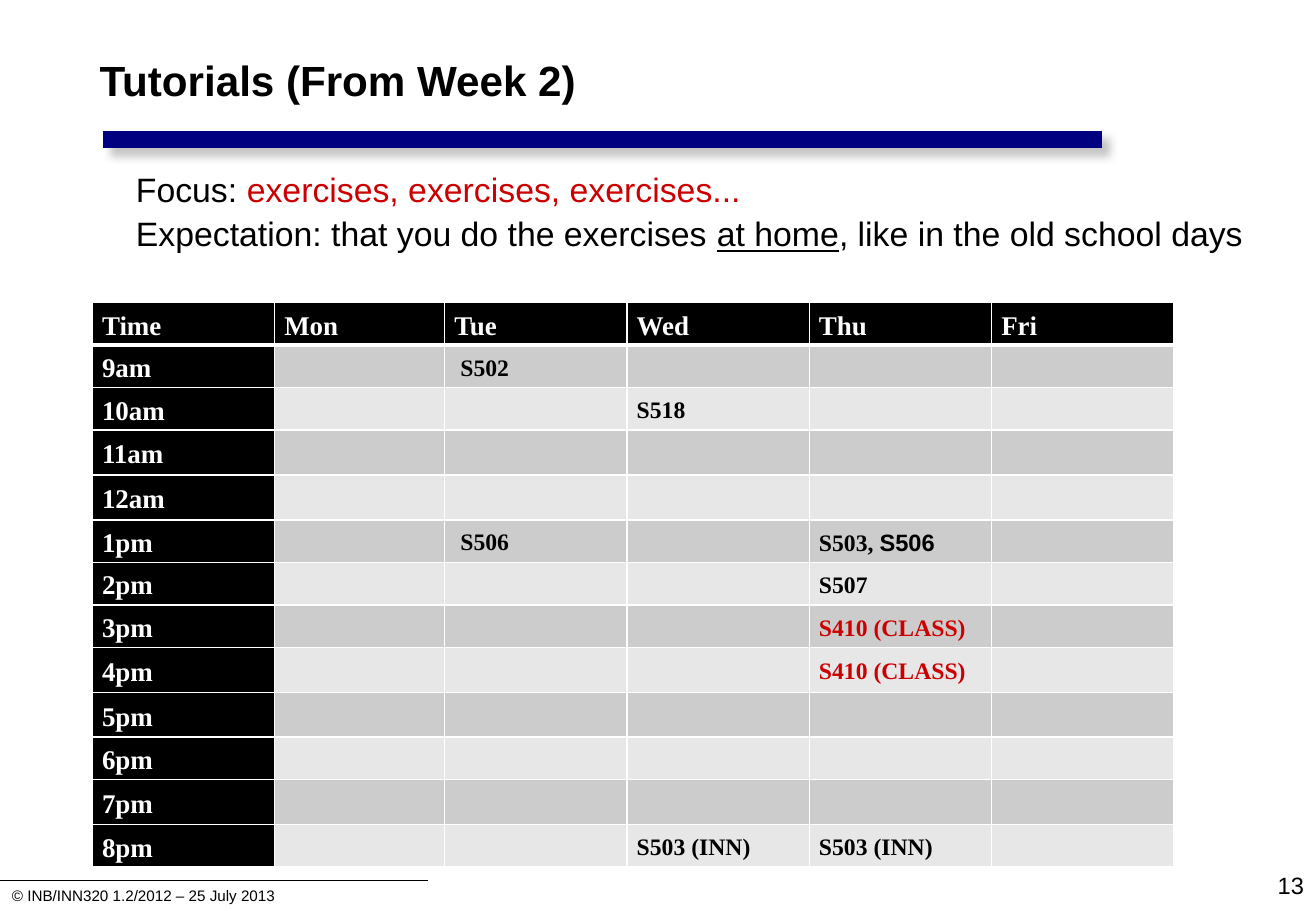
from lxml.etree import SubElement
from pptx import Presentation
from pptx.dml.color import RGBColor
from pptx.enum.shapes import MSO_CONNECTOR as Connector
from pptx.enum.text import MSO_ANCHOR as Anchor, PP_ALIGN as Align
from pptx.oxml import parse_xml
from pptx.oxml.ns import nsdecls, qn
from pptx.util import Inches, Pt

BLACK, WHITE, RED, NAVY = "000000", "FFFFFF", "CC0000", "000080"
BANDS = ["CCCCCC", "E7E7E7"]
SANS, SERIF = "Arial", "Times New Roman"

DAYS = ["Time", "Mon", "Tue", "Wed", "Thu", "Fri"]
HOURS = ["9am", "10am", "11am", "12am", "1pm", "2pm", "3pm", "4pm", "5pm",
         "6pm", "7pm", "8pm"]
TALL_HOURS = {"11am", "12am", "4pm", "5pm", "7pm"}
# (hour, day): runs of text, colour and font
BOOKINGS = {
    ("9am", "Tue"): [(" S502", BLACK, SERIF)],
    ("10am", "Wed"): [("S518", BLACK, SERIF)],
    ("1pm", "Tue"): [(" S506", BLACK, SERIF)],
    ("1pm", "Thu"): [("S503, ", BLACK, SERIF), ("S506", BLACK, SANS)],
    ("2pm", "Thu"): [("S507", BLACK, SERIF)],
    ("3pm", "Thu"): [("S410 (CLASS)", RED, SERIF)],
    ("4pm", "Thu"): [("S410 (CLASS)", RED, SERIF)],
    ("8pm", "Wed"): [("S503 (INN)", BLACK, SERIF)],
    ("8pm", "Thu"): [("S503 (INN)", BLACK, SERIF)],
}


def color(value):
    return RGBColor.from_string(value)


def add_run(paragraph, text, size, fill=BLACK, font=SANS, bold=False, underline=False):
    run = paragraph.add_run()
    run.text = text
    run.font.size = Pt(size)
    run.font.name = font
    run.font.bold = bold
    run.font.underline = underline
    run.font.color.rgb = color(fill)


def add_text_box(slide, left, top, width, height, wrap=False):
    shape = slide.shapes.add_textbox(
        Inches(left), Inches(top), Inches(width), Inches(height))
    shape.text_frame.word_wrap = wrap
    return shape.text_frame


def add_line(slide, left, top, width, fill, weight):
    line = slide.shapes.add_connector(
        Connector.STRAIGHT, Inches(left), Inches(top), Inches(left + width), Inches(top))
    line.line.color.rgb = color(fill)
    line.line.width = Pt(weight)
    return SubElement(line._element.spPr, qn("a:effectLst"))


def add_title(slide, left, top, width, height):
    title = slide.shapes.title
    title.left, title.top = Inches(left), Inches(top)
    title.width, title.height = Inches(width), Inches(height)
    frame = title.text_frame
    frame.vertical_anchor = Anchor.TOP
    paragraph = frame.paragraphs[0]
    paragraph.alignment = Align.LEFT
    add_run(paragraph, "Tutorials (From Week 2)", 25, bold=True)

    # Shadowed bar below the title
    effects = add_line(slide, left + 0.13, top + 0.75, 8.22, NAVY, 10)
    effects.append(parse_xml(
        f'<a:outerShdw {nsdecls("a")} blurRad="{Pt(5)}" dist="{Pt(5.7)}" dir="2700000">'
        '<a:srgbClr val="B2B2B2"><a:alpha val="75000"/></a:srgbClr></a:outerShdw>'))


def add_focus(slide, left, top, width, height):
    frame = add_text_box(slide, left, top, width, height, wrap=True)
    focus, expectation = frame.paragraphs[0], frame.add_paragraph()
    for paragraph in (focus, expectation):
        paragraph.line_spacing = 0.9
        properties = paragraph._p.get_or_add_pPr()
        properties.set("marL", str(Inches(0.38)))
        properties.set("indent", str(Inches(-0.38)))
    expectation.space_before = Pt(4.6)
    add_run(focus, "Focus: ", 20)
    add_run(focus, "exercises, exercises, exercises...", 20, RED)
    add_run(expectation, "Expectation: that you do the exercises ", 20)
    add_run(expectation, "at home", 20, underline=True)
    add_run(expectation, ", like in the old school days", 20)


def set_borders(cell, top, bottom):
    properties = cell._tc.get_or_add_tcPr()
    for side, weight in (("L", 1), ("R", 1), ("T", top), ("B", bottom)):
        border = SubElement(properties, qn(f"a:ln{side}"), w=str(Pt(weight)))
        fill = SubElement(border, qn("a:solidFill"))
        SubElement(fill, qn("a:srgbClr"), val=WHITE)


def add_timetable(slide, left, top, width, height):
    table = slide.shapes.add_table(
        len(HOURS) + 1, len(DAYS), Inches(left), Inches(top),
        Inches(width), Inches(height)).table
    table.horz_banding = False
    for day, column in zip(DAYS, table.columns):
        column.width = Inches(1.4 if day == "Mon" else 1.5)

    for row_index, hour in enumerate(["Time"] + HOURS):
        table.rows[row_index].height = Inches(0.37 if hour in TALL_HOURS else 0.35)
        for column_index, day in enumerate(DAYS):
            cell = table.cell(row_index, column_index)
            is_header = row_index == 0 or column_index == 0
            set_borders(cell, top=3 if row_index == 1 else 1,
                        bottom=3 if row_index == 0 else 1)
            cell.fill.solid()
            cell.fill.fore_color.rgb = color(
                BLACK if is_header else BANDS[(row_index - 1) % 2])
            cell.vertical_anchor = Anchor.MIDDLE
            cell.margin_left = cell.margin_right = Inches(0.08)
            cell.margin_top = cell.margin_bottom = 0

            if is_header:
                label = day if row_index == 0 else hour
                runs, size = [(label, WHITE, SERIF)], 16
            else:
                runs, size = BOOKINGS.get((hour, day), []), 14
            paragraph = cell.text_frame.paragraphs[0]
            if runs:
                paragraph.line_spacing = 1.15
            for text, fill, font in runs:
                add_run(paragraph, text, size, fill, font, bold=True)


def add_footer(slide, left, top, width, height):
    add_line(slide, left, top, 3.52, BLACK, 1)
    course = add_text_box(slide, left, top, 2.38, height)
    add_run(course.paragraphs[0], "© INB/INN320 1.2/2012 – 25 July 2013", 9)

    # Slide number at the right edge
    number = add_text_box(slide, left + width - 1.35, top - 0.25, 1.35, 0.58, wrap=True)
    number.vertical_anchor = Anchor.MIDDLE
    number.paragraphs[0].alignment = Align.RIGHT
    add_run(number.paragraphs[0], "13", 14)


def main():
    presentation = Presentation()
    presentation.slide_width = Inches(10.83)
    presentation.slide_height = Inches(7.5)
    slide = presentation.slides.add_slide(presentation.slide_layouts[5])
    add_title(slide, 0.72, 0.4, 7.94, 0.67)
    add_focus(slide, 1.02, 1.38, 9.49, 0.8)
    add_timetable(slide, 0.76, 2.49, 8.9, 4.65)
    add_footer(slide, 0, 7.25, 10.83, 0.25)
    presentation.save("out.pptx")


if __name__ == "__main__":
    main()
